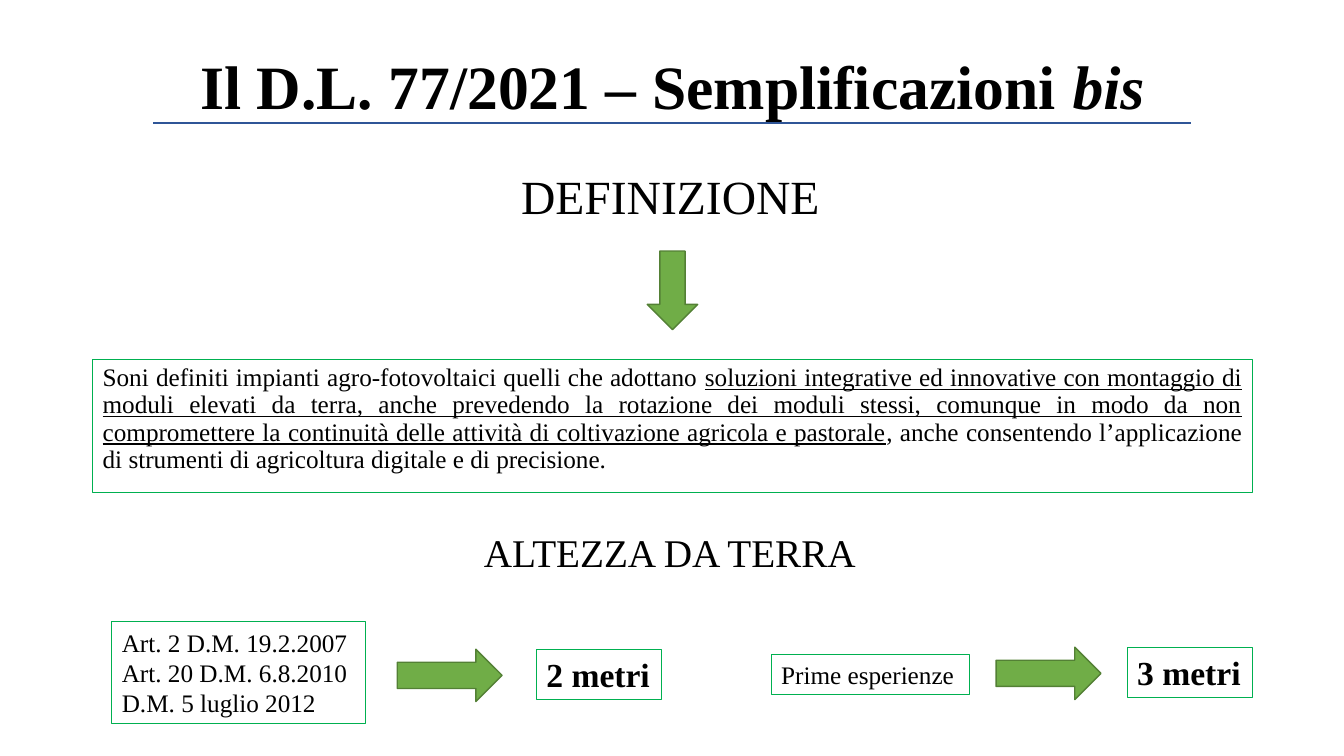
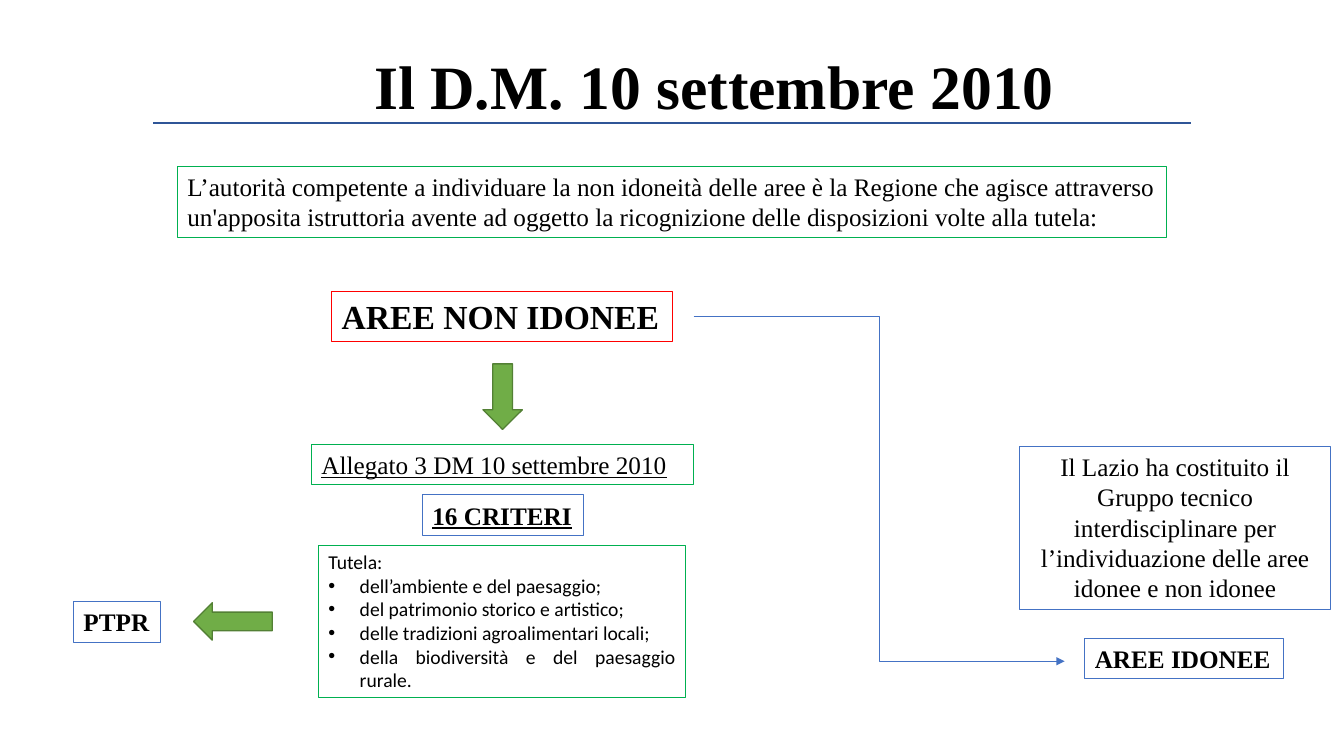
"""Builds two slides on agrivoltaic rules: the definition and the unsuitable areas."""
import lxml.etree
import pptx
import pptx.util
import pptx.dml.color
import pptx.enum.shapes
import pptx.enum.text
import pptx.oxml.ns

Inches = pptx.util.Inches
Pt = pptx.util.Pt
ALIGN = pptx.enum.text.PP_ALIGN
SHAPE = pptx.enum.shapes.MSO_SHAPE
CONNECTOR = pptx.enum.shapes.MSO_CONNECTOR

SERIF, SANS = "Times New Roman", "Calibri"
BLACK, GREEN, RED, BLUE = "000000", "00B050", "FF0000", "4472C4"
RULE_BLUE, ARROW_FILL, ARROW_EDGE = "2F5597", "70AD47", "538035"
BULLET_INDENT = 0.31

DEFINITION = [
    ("Soni definiti impianti agro-fotovoltaici quelli che adottano ", ""),
    ("soluzioni integrative ed innovative con montaggio di moduli elevati da terra, "
     "anche prevedendo la rotazione dei moduli stessi, comunque in modo da non "
     "compromettere la continuità delle attività di coltivazione agricola e pastorale", "u"),
    (", anche consentendo l’applicazione di strumenti di agricoltura digitale e di precisione.", ""),
]
DECREES = ["Art. 2 D.M. 19.2.2007", "Art. 20 D.M. 6.8.2010", "D.M. 5 luglio 2012"]
AUTHORITY = ("L’autorità competente a individuare la non idoneità delle aree è la Regione "
             "che agisce attraverso un'apposita istruttoria avente ad oggetto la "
             "ricognizione delle disposizioni volte alla tutela:")
PROTECTED = [
    "dell’ambiente e del paesaggio;",
    "del patrimonio storico e artistico;",
    "delle tradizioni agroalimentari locali;",
    "della biodiversità e del paesaggio rurale.",
]
WORKING_GROUP = ("Il Lazio ha costituito il Gruppo tecnico interdisciplinare per "
                 "l’individuazione delle aree idonee e non idonee")

SLIDES = [
    {
        "title": [("Il D.L. 77/2021 – Semplificazioni ", "b"), ("bis", "bi")],
        "title_at": (0.92, 0.16, 11.5, 1.45),
        "title_align": ALIGN.CENTER,
        "boxes": [
            {"at": (0.92, 3.57, 11.5, 1.32), "text": [DEFINITION], "edge": GREEN,
             "align": ALIGN.JUSTIFY, "wrap": True, "spacing": 0.9, "before": 10, "grow": False},
            {"at": (5.07, 1.61, 3.19, 0.67), "text": ["DEFINIZIONE"], "size": 34},
            {"at": (4.7, 5.19, 3.93, 0.57), "text": ["ALTEZZA DA TERRA"], "size": 28},
            {"at": (1.11, 6.17, 2.52, 1.01), "text": DECREES, "edge": GREEN},
            {"at": (5.32, 6.44, 1.24, 0.5), "text": [[("2 metri", "b")]], "size": 24, "edge": GREEN},
            {"at": (7.65, 6.49, 1.97, 0.4), "text": ["Prime esperienze"], "edge": GREEN},
            {"at": (11.18, 6.42, 1.24, 0.5), "text": [[("3 metri", "b")]], "size": 24, "edge": GREEN},
        ],
        "arrows": [
            (SHAPE.DOWN_ARROW, (6.42, 2.49, 0.5, 0.78)),
            (SHAPE.RIGHT_ARROW, (3.94, 6.44, 1.04, 0.52)),
            (SHAPE.RIGHT_ARROW, (9.88, 6.42, 1.04, 0.52)),
        ],
        "links": [],
    },
    {
        "title": [("Il D.M. 10 settembre 2010", "b")],
        "title_at": (3.61, 0.16, 7.54, 1.45),
        "title_align": ALIGN.LEFT,
        "boxes": [
            {"at": (1.76, 1.65, 9.81, 0.71), "text": [AUTHORITY], "edge": GREEN, "wrap": True},
            {"at": (3.29, 2.89, 3.38, 0.5), "text": [[("AREE NON IDONEE", "b")]],
             "size": 24, "edge": RED},
            {"at": (3.09, 4.41, 3.79, 0.4),
             "text": [[("Allegato 3 DM 10 settembre 2010", "u")]], "edge": GREEN},
            {"at": (4.19, 4.91, 1.6, 0.4), "text": [[("16 CRITERI", "bu")]], "edge": BLUE},
            {"at": (3.16, 5.41, 3.64, 1.51), "text": ["Tutela:"], "bullets": PROTECTED,
             "size": 14, "font": SANS, "edge": GREEN, "align": ALIGN.JUSTIFY, "wrap": True},
            {"at": (0.73, 5.97, 0.86, 0.4), "text": [[("PTPR", "b")]], "edge": BLUE},
            {"at": (10.11, 4.43, 3.09, 1.62), "text": [WORKING_GROUP], "edge": BLUE,
             "align": ALIGN.CENTER, "wrap": True},
            {"at": (10.76, 6.33, 1.97, 0.4), "text": [[("AREE IDONEE", "b")]],
             "edge": BLUE, "wrap": True},
        ],
        "arrows": [
            (SHAPE.DOWN_ARROW, (4.79, 3.61, 0.39, 0.65)),
            (SHAPE.LEFT_ARROW, (1.92, 5.98, 0.78, 0.37)),
        ],
        "links": [((6.88, 3.14), (10.56, 6.56))],
    },
]


def color(value):
    """Turn a hex string into a colour."""
    return pptx.dml.color.RGBColor.from_string(value)


def inches(values):
    """Turn numbers into lengths."""
    return [Inches(value) for value in values]


def add_element(parent, tag, **attributes):
    """Append an XML element to its parent."""
    lxml.etree.SubElement(parent, pptx.oxml.ns.qn(tag), attributes)


def set_edge(line, edge, width):
    """Colour a line and set its width in points."""
    line.color.rgb = color(edge)
    line.width = Pt(width)


def add_runs(paragraph, runs, size, font=SERIF):
    """Add plain text, or (text, style) runs with style letters b, i and u."""
    for text, style in [(runs, "")] if isinstance(runs, str) else runs:
        run = paragraph.add_run()
        run.text = text
        run.font.name = font
        run.font.size = Pt(size)
        run.font.color.rgb = color(BLACK)
        run.font.bold = "b" in style
        run.font.italic = "i" in style
        run.font.underline = "u" in style


def add_bullet(paragraph):
    """Give a paragraph a hanging bullet."""
    properties = paragraph._p.get_or_add_pPr()
    properties.set("marL", str(Inches(BULLET_INDENT)))
    properties.set("indent", str(-Inches(BULLET_INDENT)))
    add_element(properties, "a:buFont", typeface="Arial")
    add_element(properties, "a:buChar", char="•")


def add_box(slide, at, text, bullets=(), size=18, font=SERIF, edge=None, align=ALIGN.LEFT,
            wrap=False, spacing=None, before=None, grow=True):
    """Add a text box, framed when an edge colour is given."""
    box = slide.shapes.add_textbox(*inches(at))
    if edge:
        set_edge(box.line, edge, 0.75)
    frame = box.text_frame
    frame.word_wrap = wrap
    if grow:
        frame.auto_size = pptx.enum.text.MSO_AUTO_SIZE.SHAPE_TO_FIT_TEXT
    for index, runs in enumerate([*text, *bullets]):
        paragraph = frame.add_paragraph() if index else frame.paragraphs[0]
        paragraph.alignment = align
        if spacing:
            paragraph.line_spacing = spacing
        if before:
            paragraph.space_before = Pt(before)
        if index >= len(text):
            add_bullet(paragraph)
        add_runs(paragraph, runs, size, font)


def add_arrow(slide, kind, at):
    """Add a green block arrow."""
    arrow = slide.shapes.add_shape(kind, *inches(at))
    arrow.shadow.inherit = False
    arrow.fill.solid()
    arrow.fill.fore_color.rgb = color(ARROW_FILL)
    set_edge(arrow.line, ARROW_EDGE, 1)


def add_line(slide, kind, start, end, edge, width, pointed=False):
    """Add a connector without shadow, with an arrowhead when pointed."""
    connector = slide.shapes.add_connector(kind, *inches(start + end))
    set_edge(connector.line, edge, width)
    properties = connector._element.spPr
    if pointed:
        add_element(properties.find(pptx.oxml.ns.qn("a:ln")), "a:tailEnd", type="triangle")
    add_element(properties, "a:effectLst")


def add_title(slide, runs, at, align):
    """Place and format the title, with the blue rule under it."""
    title = slide.shapes.title
    title.left, title.top, title.width, title.height = inches(at)
    title.text_frame.vertical_anchor = pptx.enum.text.MSO_ANCHOR.MIDDLE
    paragraph = title.text_frame.paragraphs[0]
    paragraph.alignment = align
    paragraph.line_spacing = 0.9
    add_runs(paragraph, runs, 44)
    add_line(slide, CONNECTOR.STRAIGHT, (1.52, 1.22), (11.81, 1.22), RULE_BLUE, 1.5)


def main():
    """Build and save the presentation."""
    deck = pptx.Presentation()
    deck.slide_width, deck.slide_height = inches((13.33, 7.5))
    for content in SLIDES:
        slide = deck.slides.add_slide(deck.slide_layouts[5])
        add_title(slide, content["title"], content["title_at"], content["title_align"])
        for box in content["boxes"]:
            add_box(slide, **box)
        for kind, at in content["arrows"]:
            add_arrow(slide, kind, at)
        for start, end in content["links"]:
            add_line(slide, CONNECTOR.ELBOW, start, end, BLUE, 0.5, pointed=True)
    deck.save("out.pptx")


if __name__ == "__main__":
    main()
